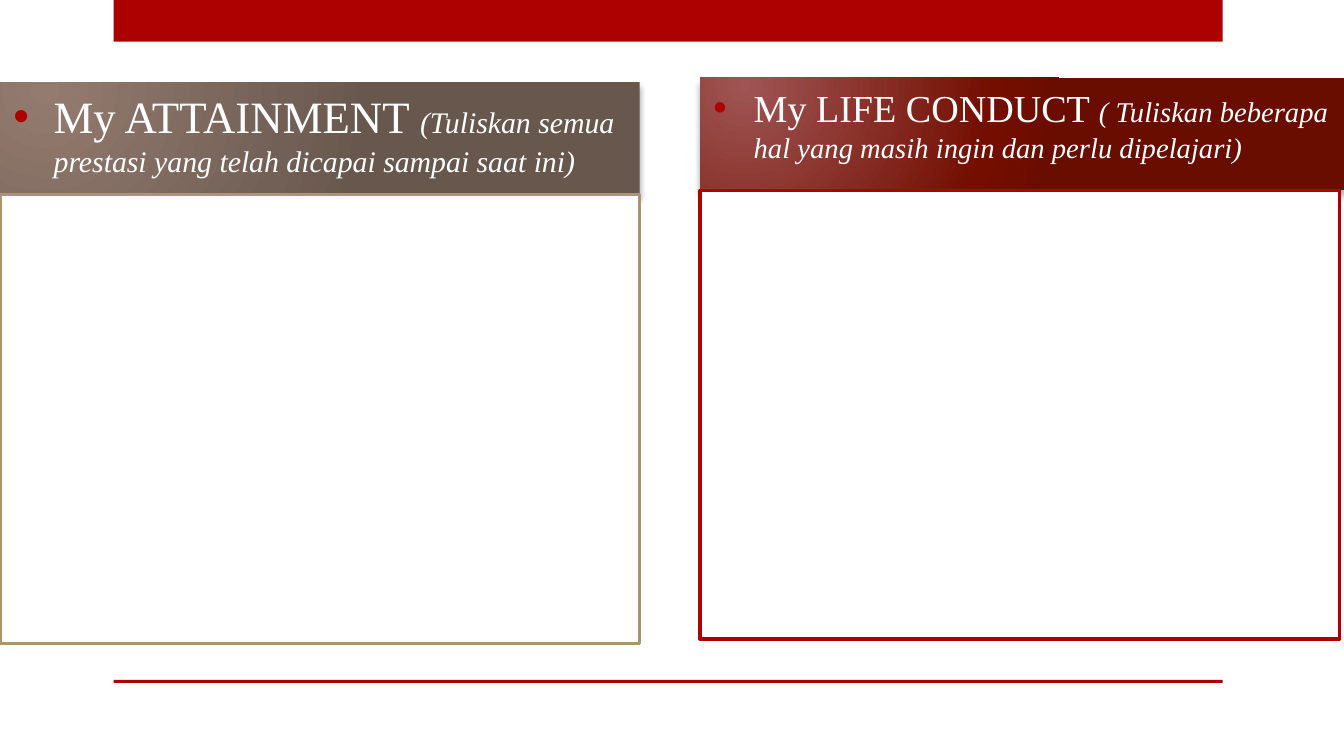
"""Build a slide with two headed, empty panels for attainments and life conduct."""
from dataclasses import dataclass

from lxml import etree
from pptx import Presentation
from pptx.dml.color import RGBColor
from pptx.enum.shapes import MSO_SHAPE
from pptx.enum.text import MSO_ANCHOR, MSO_AUTO_SIZE
from pptx.oxml import parse_xml
from pptx.oxml.ns import nsdecls
from pptx.util import Cm, Pt

RECTANGLE = MSO_SHAPE.RECTANGLE
TOP = MSO_ANCHOR.TOP
NO_AUTOFIT = MSO_AUTO_SIZE.NONE

RED = RGBColor(0xAD, 0x01, 0x01)
TAN = RGBColor(0xAC, 0x95, 0x6E)
WHITE = RGBColor(0xFF, 0xFF, 0xFF)
BROWNS = (RGBColor(0x94, 0x7B, 0x6F), RGBColor(0x72, 0x60, 0x56), RGBColor(0x67, 0x57, 0x4D))
DARK_REDS = (RGBColor(0x9F, 0x55, 0x54), RGBColor(0x73, 0x0E, 0x00), RGBColor(0x68, 0x0D, 0x00))
GRADIENT_STOPS = (0, 76, 100)

FONT = "Times New Roman"
COMPARISON_LAYOUT = 4
HEADER_HEIGHT = 2.13
PANEL_WIDTH, PANEL_HEIGHT = 12.09, 8.48
BAR_LEFT, BAR_WIDTH = 2.15, 20.96


@dataclass
class Column:
    placeholder: int
    left: float
    top: float
    header_width: float
    title: str
    hint: str
    title_size: float
    hint_size: float
    gradient: tuple[RGBColor, ...]
    border: RGBColor


COLUMNS = (
    Column(1, 0, 1.55, 12.09, "My ATTAINMENT ",
           "(Tuliskan semua prestasi yang telah dicapai sampai saat ini)",
           24, 16, BROWNS, TAN),
    Column(3, 13.23, 1.47, 12.17, "My LIFE CONDUCT ",
           "( Tuliskan beberapa hal yang masih ingin dan perlu dipelajari)",
           20.4, 15.3, DARK_REDS, RED),
)


def add_rectangle(page, left: float, top: float, width: float, height: float, fill: RGBColor):
    """Add a plain filled rectangle without outline or shadow."""
    box = page.shapes.add_shape(RECTANGLE, Cm(left), Cm(top), Cm(width), Cm(height))
    box.shadow.inherit = False
    box.fill.solid()
    box.fill.fore_color.rgb = fill
    box.line.fill.background()
    return box


def style_header(box, colors: tuple[RGBColor, ...]) -> None:
    """Give the header a radial gradient and a soft shadow below."""
    stops = "".join(
        f'<a:gs pos="{stop * 1000}"><a:srgbClr val="{color}"/></a:gs>'
        for stop, color in zip(GRADIENT_STOPS, colors)
    )
    properties = box._element.spPr
    properties.append(parse_xml(
        f'<a:gradFill {nsdecls("a")} rotWithShape="1"><a:gsLst>{stops}</a:gsLst>'
        '<a:path path="circle"><a:fillToRect l="15000" t="15000" r="100000" b="100000"/>'
        '</a:path></a:gradFill>'
    ))
    properties.append(parse_xml(
        f'<a:effectLst {nsdecls("a")}><a:outerShdw blurRad="{Pt(3)}" dist="{Pt(3)}" '
        'dir="5400000" rotWithShape="0"><a:srgbClr val="000000"><a:alpha val="35000"/>'
        '</a:srgbClr></a:outerShdw></a:effectLst>'
    ))


def add_bullet(para) -> None:
    """Give the paragraph a red bullet with a hanging indent."""
    properties = para._p.get_or_add_pPr()
    properties.set("marL", str(Cm(0.76)))
    properties.set("indent", str(-Cm(0.76)))
    for markup in (
        f'<a:buClr {nsdecls("a")}><a:srgbClr val="{RED}"/></a:buClr>',
        f'<a:buFont {nsdecls("a")} typeface="Arial"/>',
        f'<a:buChar {nsdecls("a")} char="•"/>',
    ):
        properties.append(etree.fromstring(markup, properties.getroottree().parser))


def add_span(para, text: str, size: float, italic: bool) -> None:
    """Add a white run of text."""
    span = para.add_run()
    span.text = text
    span.font.name = FONT
    span.font.size = Pt(size)
    span.font.bold = False
    span.font.italic = italic
    span.font.color.rgb = WHITE


def fill_header(box, column: Column) -> None:
    """Place, style and write the header of a column."""
    box.left, box.top = Cm(column.left), Cm(column.top)
    box.width, box.height = Cm(column.header_width), Cm(HEADER_HEIGHT)
    style_header(box, column.gradient)
    frame = box.text_frame
    frame.word_wrap = True
    frame.auto_size = NO_AUTOFIT
    frame.vertical_anchor = TOP
    para = frame.paragraphs[0]
    para.space_before = Pt(3)
    add_bullet(para)
    add_span(para, column.title, column.title_size, False)
    add_span(para, column.hint, column.hint_size, True)


def main() -> None:
    """Build and save the deck."""
    deck = Presentation()
    deck.slide_width, deck.slide_height = Cm(25.4), Cm(14.29)
    page = deck.slides.add_slide(deck.slide_layouts[COMPARISON_LAYOUT])
    headers = {box.placeholder_format.idx: box for box in page.placeholders}

    add_rectangle(page, BAR_LEFT, 0, BAR_WIDTH, 0.79, RED)
    add_rectangle(page, BAR_LEFT, 12.85, BAR_WIDTH, 0.06, RED)

    for column in COLUMNS:
        fill_header(headers.pop(column.placeholder), column)
        panel = add_rectangle(page, column.left, column.top + HEADER_HEIGHT,
                              PANEL_WIDTH, PANEL_HEIGHT, WHITE)
        panel.line.color.rgb = column.border
        panel.line.width = Pt(1.75)

    for unused in headers.values():
        unused._element.getparent().remove(unused._element)

    deck.save("out.pptx")


if __name__ == "__main__":
    main()
